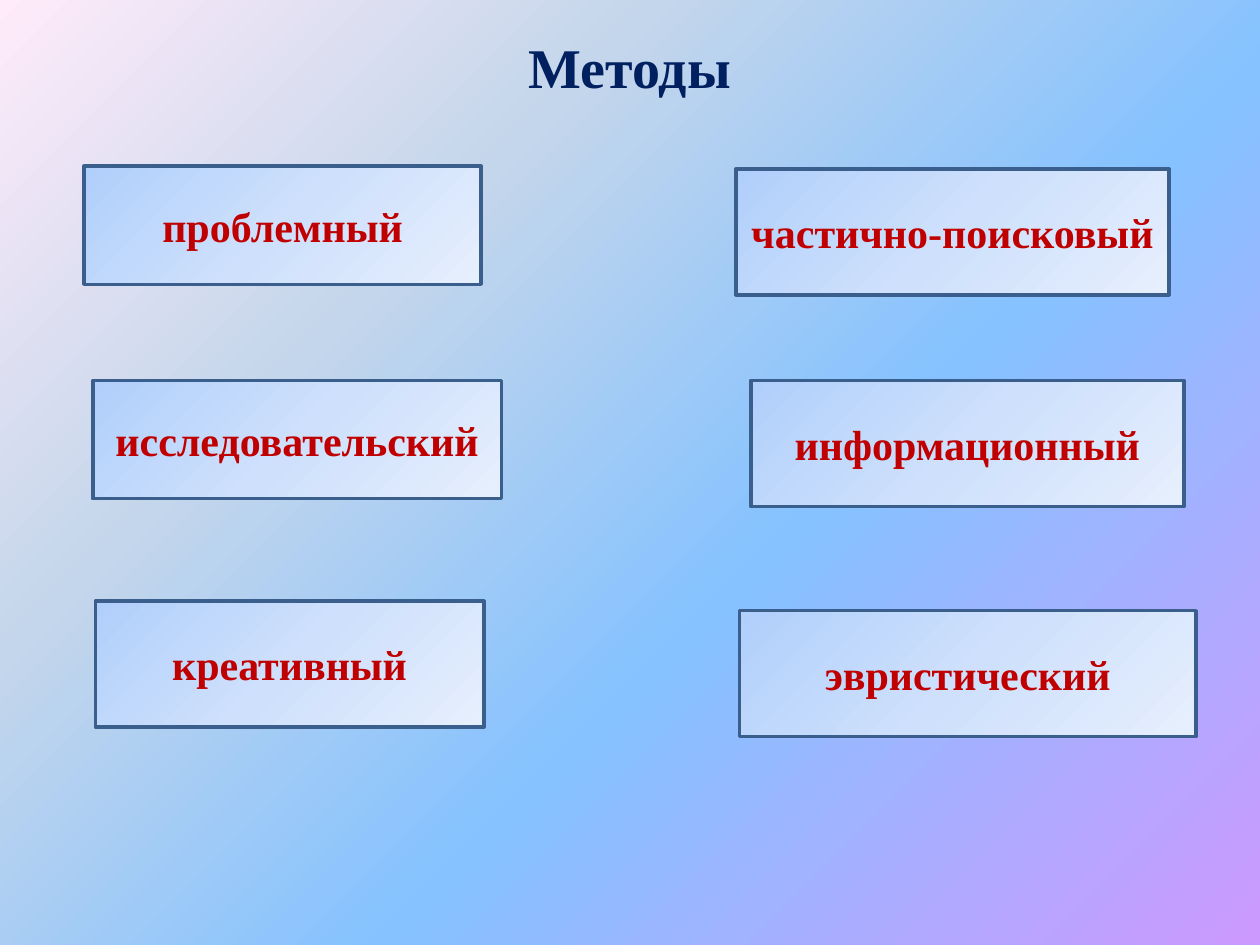
import pptx
import pptx.util
import pptx.dml.color
import pptx.enum.shapes
import pptx.enum.text
import pptx.oxml.ns
from lxml import etree

Pt = pptx.util.Pt
qn = pptx.oxml.ns.qn

COLORS = {
    "title": "002060",
    "method": "C00000",
    "border": "3A5F8C",
}
BACKGROUND = [(0, "FFEBFA"), (30, "C4D6EB"), (60, "85C2FF"), (100, "CC99FF")]
BOX_FILL = [(0, "B0CFFB"), (50, "CEE0FC"), (100, "E6EFFD")]
METHODS = [
    ("проблемный", 48, 95, 227, 67.5),
    ("частично-поисковый", 420.5, 96.5, 247.5, 72),
    ("креативный", 54.5, 343.5, 222, 72),
    ("информационный", 429, 217.5, 247.5, 72),
    ("исследовательский", 53, 217.5, 233.5, 67.5),
    ("эвристический", 422.5, 349, 261, 72),
]


class Deck:
    font = "Times New Roman"

    def __init__(self, prs):
        self.s = prs.slides.add_slide(prs.slide_layouts[5])

    def color(self, name):
        return pptx.dml.color.RGBColor.from_string(COLORS[name])

    def gradient(self, fill, owner, stops):
        fill.gradient()
        fill.gradient_angle = 315
        gs_list = owner.find(".//" + qn("a:gsLst"))
        for gs in list(gs_list):
            gs_list.remove(gs)
        for pos, rgb in stops:
            gs = etree.SubElement(gs_list, qn("a:gs"), pos=str(pos * 1000))
            etree.SubElement(gs, qn("a:srgbClr"), val=rgb)

    def background(self, stops):
        self.gradient(self.s.background.fill, self.s._element, stops)

    def label(self, sp, text, size, color):
        tf = sp.text_frame
        tf.text = text
        tf.word_wrap = True
        tf.vertical_anchor = pptx.enum.text.MSO_ANCHOR.MIDDLE
        p = tf.paragraphs[0]
        p.alignment = pptx.enum.text.PP_ALIGN.CENTER
        r = p.runs[0]
        r.font.name = self.font
        r.font.size = Pt(size)
        r.font.bold = True
        r.font.color.rgb = self.color(color)

    def title(self, text, left, top, width, height):
        sp = self.s.shapes.title
        sp.left, sp.top = Pt(left), Pt(top)
        sp.width, sp.height = Pt(width), Pt(height)
        self.label(sp, text, 32, "title")

    def box(self, text, left, top, width, height):
        sp = self.s.shapes.add_shape(
            pptx.enum.shapes.MSO_SHAPE.RECTANGLE,
            Pt(left), Pt(top), Pt(width), Pt(height))
        sp.shadow.inherit = False
        self.gradient(sp.fill, sp._element, BOX_FILL)
        sp.line.color.rgb = self.color("border")
        sp.line.width = Pt(2)
        self.label(sp, text, 24, "method")


def main():
    prs = pptx.Presentation()
    prs.slide_width, prs.slide_height = Pt(720), Pt(540)
    deck = Deck(prs)
    deck.background(BACKGROUND)
    deck.title("Методы", 36, 9.5, 648, 57)
    for method in METHODS:
        deck.box(*method)
    prs.save("out.pptx")


if __name__ == "__main__":
    main()
